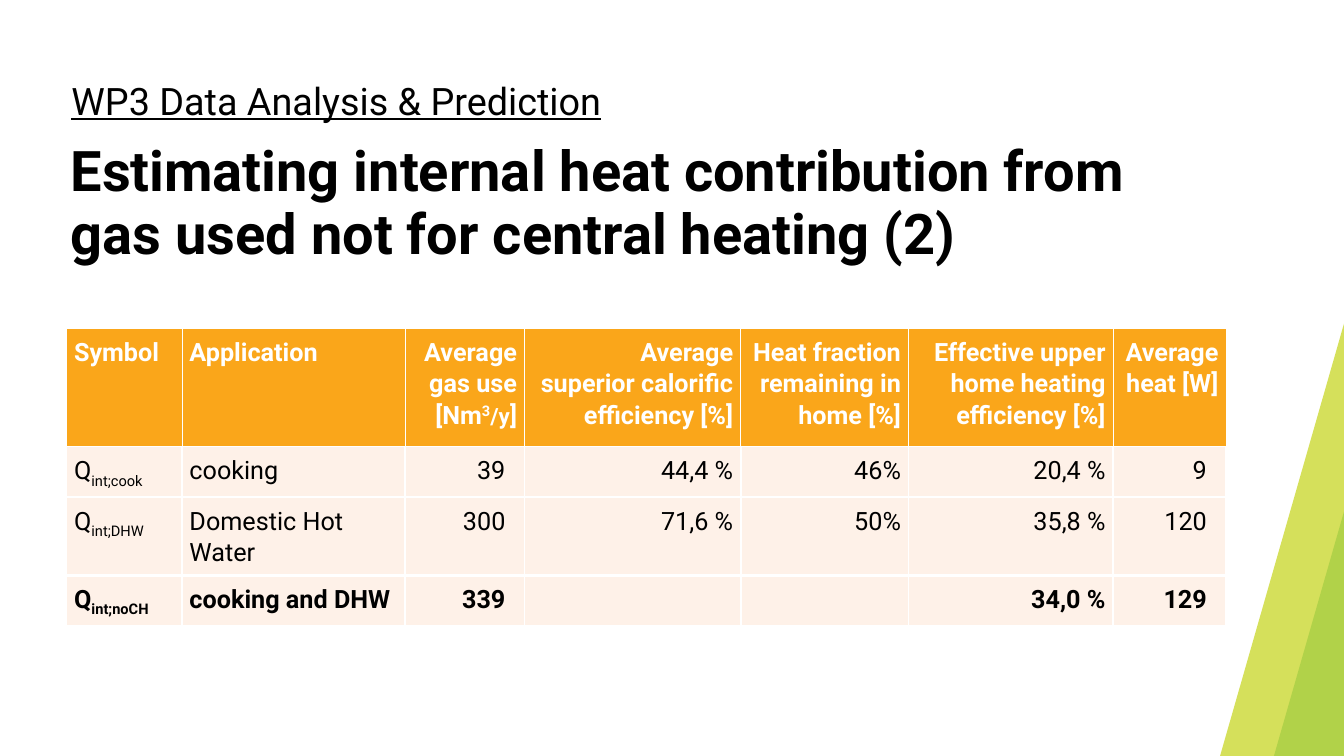
from lxml.etree import SubElement
from pptx import Presentation
from pptx.dml.color import RGBColor
from pptx.enum.shapes import MSO_SHAPE
from pptx.enum.text import MSO_ANCHOR, MSO_AUTO_SIZE, PP_ALIGN
from pptx.oxml import parse_xml
from pptx.oxml.ns import nsdecls, qn
from pptx.util import Inches, Pt

FONT = "Roboto"
BLACK, WHITE, ORANGE, CREAM = "000000", "FFFFFF", "FAA61A", "FEF1E8"
BANDS = [
    (25.5, 5.42, 1.39, 10.36, "D5E05B"),
    (26.05, 9.11, 1.79, 6.66, "B1D249"),
]
SUBTITLE = "WP3 Data Analysis & Prediction"
TITLE = "Estimating internal heat contribution from gas used not for central heating (2)"
SUPERSCRIPT, SUBSCRIPT = 30, -25
COLUMN_WIDTHS = [2.29, 4.43, 2.37, 4.29, 3.33, 4.06, 2.24]
ROW_HEIGHTS = [2.35, 1.0, 1.55, 1.0]
BORDERS = [(1, 1, 3), (3, 3, 3), (3, 3, 6), (3, 6, 3)]
INDENTED_COLUMNS = (2, 6)
ROWS = [
    [
        "Symbol",
        "Application",
        [("Average gas use [Nm", 36, 0), ("3", 36, SUPERSCRIPT), ("/y", 32, 0), ("]", 36, 0)],
        "Average\nsuperior calorific efficiency [%]",
        "Heat fraction remaining in home [%]",
        "Effective upper home heating efficiency [%]",
        "Average heat [W]",
    ],
    [[("Q", 36, 0), ("int;cook", 36, SUBSCRIPT)], "cooking", "39", "44,4 %", "46%", "20,4 %", "9"],
    [[("Q", 36, 0), ("int;DHW", 36, SUBSCRIPT)], "Domestic Hot Water", "300", "71,6 %", "50%", "35,8 %", "120"],
    [[("Q", 36, 0), ("int;noCH", 36, SUBSCRIPT)], "cooking and DHW", "339", "", "", "34,0 %", "129"],
]


def color(value):
    """Turn a hex string into a colour."""
    return RGBColor.from_string(value)


def add_span(para, text, size, ink=BLACK, bold=False, underline=False, baseline=0):
    """Add one formatted run to a paragraph."""
    span = para.add_run()
    span.text = text
    font = span.font
    font.name, font.size, font.bold, font.underline = FONT, Pt(size), bold, underline
    font.color.rgb = color(ink)
    if baseline:
        span._r.get_or_add_rPr().set("baseline", str(baseline * 1000))


def add_band(page, left, top, width, height, fill):
    """Draw one slanted band at the right edge."""
    band = page.shapes.add_shape(
        MSO_SHAPE.RECTANGLE, Inches(left), Inches(top), Inches(width), Inches(height))
    band.rotation = 16
    band.shadow.inherit = False
    band.fill.solid()
    band.fill.fore_color.rgb = color(fill)
    band.line.fill.background()


def prepare_text(box, left, top, width, height):
    """Place a text shape and return its first paragraph."""
    box.left, box.top, box.width, box.height = map(Inches, (left, top, width, height))
    frame = box.text_frame
    frame.word_wrap = True
    frame.auto_size = MSO_AUTO_SIZE.NONE
    frame.vertical_anchor = MSO_ANCHOR.TOP
    para = frame.paragraphs[0]
    para.alignment = PP_ALIGN.LEFT
    return para


def set_borders(cell, side, top, bottom):
    """Give a cell white borders of the given widths in points."""
    properties = cell._tc.get_or_add_tcPr()
    for index, (edge, width) in enumerate(zip("LRTB", (side, side, top, bottom))):
        line = parse_xml(f'<a:ln{edge} {nsdecls("a")} w="{Pt(width)}"/>')
        fill = SubElement(line, qn("a:solidFill"))
        SubElement(fill, qn("a:srgbClr"), val=WHITE)
        properties.insert(index, line)


def fill_cell(cell, content, row, column):
    """Write and format one table cell."""
    header = row == 0
    cell.fill.solid()
    cell.fill.fore_color.rgb = color(ORANGE if header else CREAM)
    set_borders(cell, *BORDERS[row])
    cell.margin_left = cell.margin_right = cell.margin_top = cell.margin_bottom = Inches(0.15)
    if column in INDENTED_COLUMNS and not header:
        cell.margin_right = Inches(0.38)
    para = cell.text_frame.paragraphs[0]
    para.alignment = PP_ALIGN.LEFT if column < 2 else PP_ALIGN.RIGHT
    para.line_spacing = 1.07
    para.space_after = Pt(8)
    spans = [(content, 36, 0)] if isinstance(content, str) else content
    for text, size, baseline in spans:
        for number, part in enumerate(text.split("\n")):
            if number:
                para.add_line_break()
            if part:
                add_span(para, part, size, WHITE if header else BLACK,
                         bold=row in (0, len(ROWS) - 1), baseline=baseline)


def add_heat_table(page):
    """Add the table of heat contributions."""
    table = page.shapes.add_table(
        len(ROWS), len(COLUMN_WIDTHS), Inches(1.32), Inches(6.51),
        Inches(sum(COLUMN_WIDTHS)), Inches(sum(ROW_HEIGHTS))).table
    table.horz_banding = False
    for column, width in zip(table.columns, COLUMN_WIDTHS):
        column.width = Inches(width)
    for row, height in zip(table.rows, ROW_HEIGHTS):
        row.height = Inches(height)
    for row, contents in enumerate(ROWS):
        for column, content in enumerate(contents):
            fill_cell(table.cell(row, column), content, row, column)


def main():
    """Build and save the slide."""
    deck = Presentation()
    deck.slide_width, deck.slide_height = Inches(26.67), Inches(15)
    page = deck.slides.add_slide(deck.slide_layouts[5])
    for band in BANDS:
        add_band(page, *band)
    add_heat_table(page)

    subtitle = page.shapes.add_textbox(0, 0, 0, 0)
    para = prepare_text(subtitle, 1.32, 1.59, 23, 1.04)
    para.line_spacing = 0.9
    add_span(para, SUBTITLE, 54, underline=True)

    para = prepare_text(page.shapes.title, 1.3, 2.73, 23.02, 2.9)
    para.line_spacing = Pt(90)
    add_span(para, TITLE, 80, bold=True)
    deck.save("out.pptx")


if __name__ == "__main__":
    main()
